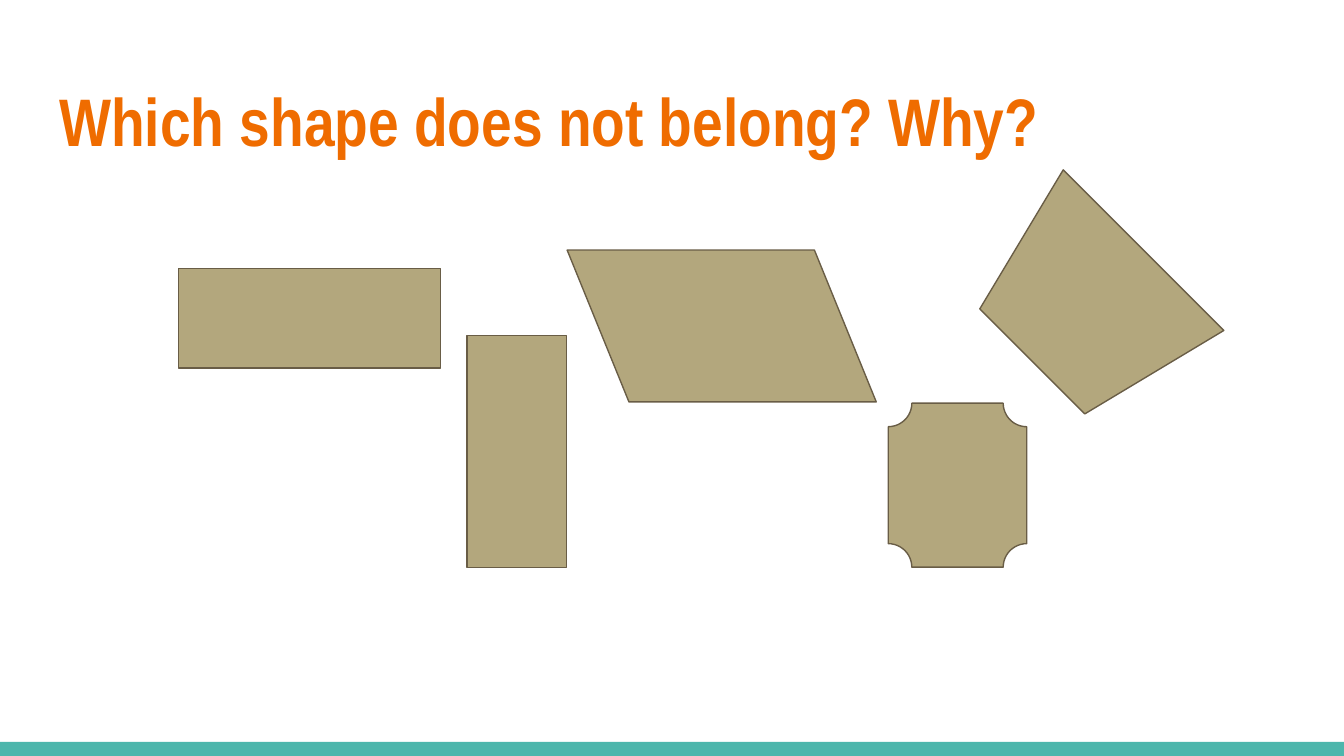
from pptx import Presentation
from pptx.dml.color import RGBColor
from pptx.enum.shapes import MSO_SHAPE
from pptx.enum.text import MSO_ANCHOR, MSO_AUTO_SIZE, PP_ALIGN
from pptx.util import Inches, Pt

RECTANGLE = MSO_SHAPE.RECTANGLE
TRAPEZOID = MSO_SHAPE.TRAPEZOID
PARALLELOGRAM = MSO_SHAPE.FLOWCHART_DATA
PLAQUE = MSO_SHAPE.PLAQUE
TOP = MSO_ANCHOR.TOP
NO_FIT = MSO_AUTO_SIZE.NONE
LEFT = PP_ALIGN.LEFT

ORANGE = RGBColor(0xEF, 0x6C, 0x00)
TEAL = RGBColor(0x4D, 0xB6, 0xAC)
KHAKI = RGBColor(0xB3, 0xA7, 0x7D)
BROWN = RGBColor(0x69, 0x5D, 0x46)
WIDTH = 10
HEIGHT = WIDTH * 9 / 16
TITLE_ONLY = 5


class ShapePuzzle:
    title_font = {"name": "Arial Narrow", "size": Pt(36), "bold": True}
    title_frame = {
        "margin_left": Inches(0.1), "margin_right": Inches(0.1),
        "margin_top": Inches(0.1), "margin_bottom": Inches(0.1),
        "vertical_anchor": TOP, "word_wrap": True, "auto_size": NO_FIT,
    }

    def __init__(self, page):
        self.page = page

    def title(self, words, left, top, width, height):
        box = self.page.shapes.title
        place = {"left": left, "top": top, "width": width, "height": height}
        for name, value in place.items():
            setattr(box, name, Inches(value))
        for name, value in self.title_frame.items():
            setattr(box.text_frame, name, value)
        para = box.text_frame.paragraphs[0]
        para.alignment = LEFT
        span = para.add_run()
        span.text = words
        for name, value in self.title_font.items():
            setattr(span.font, name, value)
        span.font.color.rgb = ORANGE

    def block(self, kind, place, fill):
        shape = self.page.shapes.add_shape(kind, *map(Inches, place))
        shape.shadow.inherit = False
        shape.fill.solid()
        shape.fill.fore_color.rgb = fill
        shape.line.fill.background()
        return shape

    def figure(self, kind, place, rotation=0, corner=None, mirrored=False):
        shape = self.block(kind, place, KHAKI)
        shape.line.color.rgb = BROWN
        shape.line.width = Pt(0.75)
        shape.rotation = rotation
        if corner is not None:
            shape.adjustments[0] = corner
        if mirrored:
            shape._element.spPr.xfrm.set("flipH", "1")


def main():
    deck = Presentation()
    deck.slide_width, deck.slide_height = Inches(WIDTH), Inches(HEIGHT)
    puzzle = ShapePuzzle(deck.slides.add_slide(deck.slide_layouts[TITLE_ONLY]))
    puzzle.block(RECTANGLE, (0, 5.52, WIDTH, 0.11), TEAL)
    puzzle.title("Which shape does not belong? Why?", 0.34, 0.49, 9.32, 0.77)
    puzzle.figure(RECTANGLE, (1.33, 2, 1.95, 0.74))
    puzzle.figure(TRAPEZOID, (7.25, 1.69, 1.69, 1.17), rotation=225, corner=0.25)
    puzzle.figure(PARALLELOGRAM, (4.22, 1.86, 2.3, 1.13), rotation=180, mirrored=True)
    puzzle.figure(RECTANGLE, (2.98, 2.99, 1.73, 0.74), rotation=90)
    puzzle.figure(PLAQUE, (6.61, 3, 1.03, 1.22), corner=0.17)
    deck.save("out.pptx")


if __name__ == "__main__":
    main()
